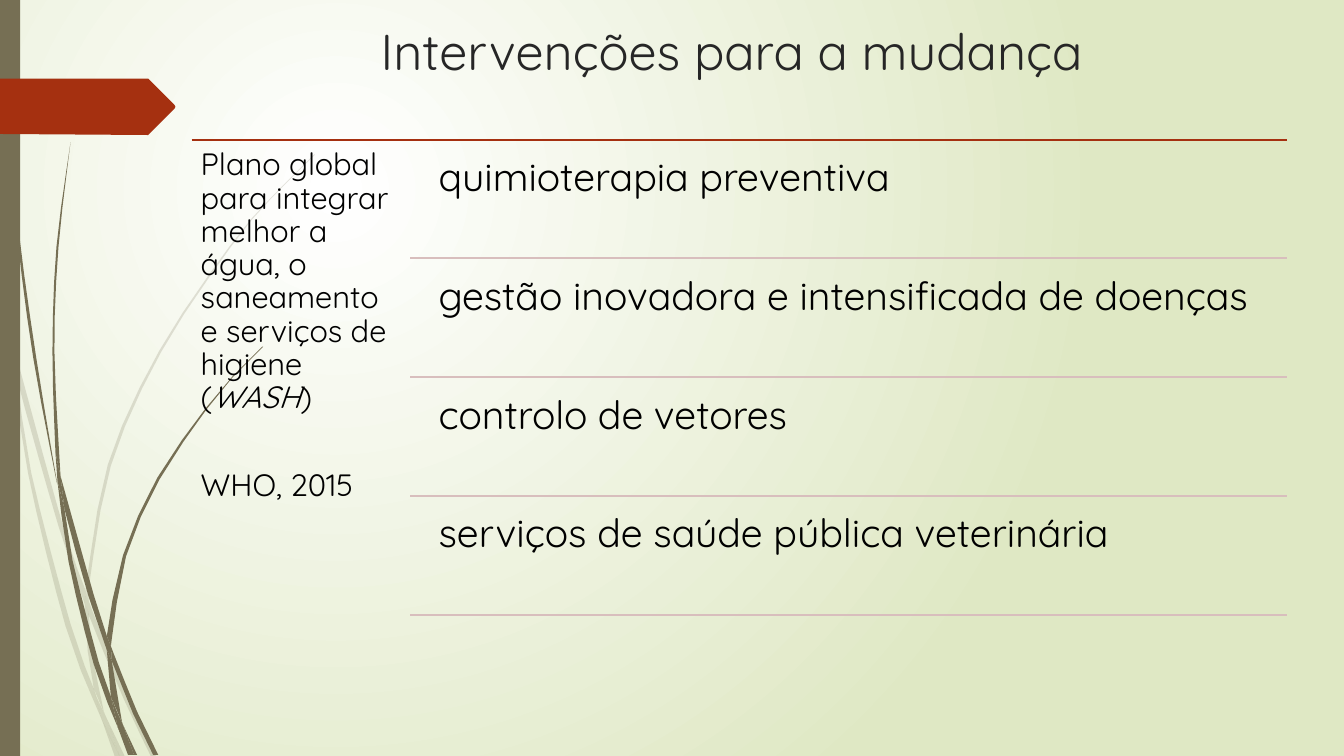
import math
from dataclasses import dataclass
from typing import NamedTuple

from lxml import etree
from pptx import Presentation
from pptx.dml.color import RGBColor
from pptx.enum import shapes, text
from pptx.oxml import ns
from pptx.util import Inches, Pt

Edge = list[tuple[float, float]]


@dataclass(frozen=True)
class Theme:
    font: str = "Quicksand"
    bark: str = "766F54"
    rust: str = "A53010"
    rose: str = "D8BEBD"
    white: str = "FFFFFF"
    leaf: str = "DFE8C4"
    heading: str = "262626"
    ink: str = "000000"
    title_size: int = 36
    item_size: int = 28
    plan_size: int = 22


class Blade(NamedTuple):
    """A piece of grass between two smooth edges, listed in drawing order."""
    out: Edge
    back: Edge


class Rule(NamedTuple):
    left: float
    top: float
    color: str


THEME = Theme()
RIGHT = 12.76
TOP = 1.39
ITEMS_TOP = 1.44
ITEM_STEP = 1.18
ITEM_HEIGHT = 1.12
ITEMS = [
    "quimioterapia preventiva",
    "gestão inovadora e intensificada de doenças",
    "controlo de vetores",
    "serviços de saúde pública veterinária",
]
PENNANT: Edge = [(0, 0.78), (1.47, 0.78), (1.73, 1.04), (1.74, 1.06),
                 (1.73, 1.08), (1.47, 1.34), (0, 1.33)]

PALE_GRASS = [
    Blade([(0.11, 3.5), (0.09, 3.22), (0, 2.82)], [(0, 2.99), (0.1, 3.44)]),
    Blade([(0.14, 3.45), (0.17, 3.76), (0.58, 5.22), (0.84, 5.99)],
          [(0.85, 5.86), (0.62, 5.2), (0.14, 3.45)]),
    Blade([(0.88, 5.96), (0.88, 6.1), (1.23, 6.94), (1.5, 7.51)],
          [(1.55, 7.51), (1.27, 6.92), (0.92, 6.07)]),
    Blade([(1.19, 7.51), (1.24, 7.51)], [(1.05, 7.11)]),
    Blade([(0.93, 6.83), (0.7, 6.19), (0.31, 4.69), (0.17, 3.76), (0.11, 3.5)],
          [(0.11, 3.5), (0.28, 4.7), (0.65, 6.21), (0.92, 6.93), (1.01, 7.14)]),
    Blade([(0.84, 5.99), (0.87, 6.46), (0.93, 6.83), (1.05, 7.11)],
          [(1.03, 7.06), (0.91, 6.46), (0.88, 6.08)]),
    Blade([(0.88, 5.96), (0.88, 5.84), (1.1, 4.62), (1.6, 3.49), (2.29, 2.45),
           (2.68, 1.98), (3.12, 1.54)],
          [(3.12, 1.53), (2.68, 1.97), (2.28, 2.44), (1.58, 3.48),
           (1.07, 4.61), (0.85, 5.84)]),
    Blade([(1.01, 7.14), (1.14, 7.51)], [(1.19, 7.51)]),
    Blade([(0.88, 6.1), (0.88, 5.96), (0.85, 5.86)], [(0.84, 5.99), (0.88, 6.08)]),
    Blade([(0.93, 6.83), (1.01, 7.14), (1.19, 7.51)], [(1.05, 7.11), (0.96, 6.92)]),
]
DARK_GRASS = [
    Blade([(0.04, 0), (0.08, 1.09), (0.19, 2.32), (0.36, 3.55), (0.57, 4.81)],
          [(0.56, 4.77), (0.33, 3.55), (0.17, 2.33), (0.07, 1.1), (0.03, 0)]),
    Blade([(0.6, 4.72), (0.64, 5.05), (0.88, 5.92), (1.06, 6.45)],
          [(1.06, 6.31), (0.93, 5.9), (0.6, 4.72)]),
    Blade([(1.1, 6.41), (1.11, 6.56), (1.32, 7.08), (1.52, 7.49)],
          [(1.57, 7.49), (1.36, 7.06), (1.13, 6.49)]),
    Blade([(1.1, 6.91), (0.98, 6.57), (0.72, 5.56), (0.64, 5.05), (0.57, 4.77)],
          [(0.57, 4.77), (0.68, 5.57), (0.93, 6.59), (1.17, 7.22)]),
    Blade([(0.6, 4.72), (0.54, 3.49), (0.58, 2.45), (0.7, 1.41)],
          [(0.7, 1.41), (0.56, 2.45), (0.52, 3.49), (0.55, 4.49)]),
    Blade([(1.33, 7.49), (1.36, 7.49)], [(1.22, 7.19)]),
    Blade([(0.57, 4.77), (0.64, 5.05)], [(0.6, 4.72), (0.55, 4.49)]),
    Blade([(1.11, 6.33), (1.25, 5.52), (1.58, 4.76), (2.05, 4.06), (2.31, 3.74), (2.61, 3.44)],
          [(2.6, 3.44), (2.31, 3.73), (2.04, 4.05), (1.56, 4.74), (1.22, 5.51),
           (1.06, 6.31), (1.1, 6.41)]),
    Blade([(1.17, 7.22), (1.27, 7.49)], [(1.31, 7.49)]),
    Blade([(1.06, 6.45), (1.1, 6.91), (1.22, 7.19)], [(1.21, 7.16), (1.11, 6.56)]),
    Blade([(1.06, 6.45), (1.11, 6.56)], [(1.1, 6.41), (1.06, 6.31)]),
    Blade([(1.1, 6.91), (1.17, 7.22), (1.3, 7.49)], [(1.33, 7.49), (1.22, 7.19), (1.16, 7.06)]),
]


def smooth(edge: Edge) -> Edge:
    """Sample a Catmull-Rom curve through an edge, more finely on long stretches."""
    padded = [edge[0], *edge, edge[-1]]
    curve = [edge[0]]
    for a, b, c, d in zip(padded, padded[1:], padded[2:], padded[3:]):
        steps = max(1, round(math.dist(b, c) * 2.5))
        for step in range(1, steps + 1):
            t = step / steps
            x, y = (
                (2 * q + (r - p) * t + (2 * p - 5 * q + 4 * r - s) * t**2
                 + (3 * q - p - 3 * r + s) * t**3) / 2
                for p, q, r, s in zip(a, b, c, d))
            curve.append((x, y))
    return curve


def paint(shape, color: str, opacity: int = 100) -> None:
    shape.shadow.inherit = False
    shape.line.fill.background()
    shape.fill.solid()
    shape.fill.fore_color.rgb = RGBColor.from_string(color)
    if opacity < 100:
        rgb = shape._element.spPr.find(".//" + ns.qn("a:srgbClr"))
        etree.SubElement(rgb, ns.qn("a:alpha"), val=str(opacity * 1000))


def draw_outline(parent, outline: Edge, color: str, opacity: int = 100) -> None:
    start, *rest = [(Inches(x), Inches(y)) for x, y in outline]
    builder = parent.build_freeform(*start)
    builder.add_line_segments(rest, close=True)
    paint(builder.convert_to_shape(), color, opacity)


def draw_grass(slide, blades: list[Blade], opacity: int) -> None:
    tuft = slide.shapes.add_group_shape().shapes
    for blade in blades:
        draw_outline(tuft, smooth(blade.out) + smooth(blade.back), THEME.bark, opacity)


def draw_rule(slide, rule: Rule) -> None:
    line = slide.shapes.add_connector(
        shapes.MSO_CONNECTOR.STRAIGHT, Inches(rule.left), Inches(rule.top),
        Inches(RIGHT), Inches(rule.top))
    line.line.color.rgb = RGBColor.from_string(rule.color)
    line.line.width = Pt(1.25)
    etree.SubElement(line._element.spPr, ns.qn("a:effectLst"))


def write(paragraph, words: str, *, size: int, color: str = THEME.ink, italic: bool = False,
          align=text.PP_ALIGN.LEFT, spacing: float = 0.9, before: float = 0) -> None:
    paragraph.alignment = align
    paragraph.line_spacing = spacing
    paragraph.space_before, paragraph.space_after = Pt(before), Pt(0)
    run = paragraph.add_run()
    run.text = words
    run.font.name, run.font.size, run.font.italic = THEME.font, Pt(size), italic
    run.font.color.rgb = RGBColor.from_string(color)


def place(box, left: float, top: float, width: float, height: float,
          inset: float, anchor=text.MSO_ANCHOR.TOP):
    """Position a text shape, set up its frame and return the frame."""
    box.left, box.top, box.width, box.height = map(Inches, (left, top, width, height))
    frame = box.text_frame
    frame.word_wrap, frame.auto_size = True, text.MSO_AUTO_SIZE.NONE
    frame.vertical_anchor = anchor
    frame.margin_left = frame.margin_right = Inches(inset)
    frame.margin_top = frame.margin_bottom = Inches(inset)
    return frame


def fill_background(slide) -> None:
    fill = slide.background.fill
    fill.gradient()
    for stop, color, position in zip(fill.gradient_stops, (THEME.white, THEME.leaf), (0, 1)):
        stop.color.rgb = RGBColor.from_string(color)
        stop.position = position
    linear = slide._element.find(".//" + ns.qn("a:lin"))
    circle = etree.Element(ns.qn("a:path"), path="circle")
    etree.SubElement(circle, ns.qn("a:fillToRect"), l="50000", t="50000", r="100000", b="100000")
    linear.getparent().replace(linear, circle)


def main() -> None:
    deck = Presentation()
    deck.slide_width, deck.slide_height = Inches(13.33), Inches(7.5)
    slide = deck.slides.add_slide(deck.slide_layouts[1])
    fill_background(slide)

    draw_grass(slide, PALE_GRASS, 20)
    draw_grass(slide, DARK_GRASS, 100)
    trunk = slide.shapes.add_shape(
        shapes.MSO_SHAPE.RECTANGLE, 0, 0, Inches(0.2), deck.slide_height)
    paint(trunk, THEME.bark)
    draw_outline(slide.shapes, PENNANT, THEME.rust)

    heading, plan = slide.shapes.title, slide.placeholders[1]
    for holder in (heading, plan):  # bring in front of the grass
        slide.shapes._spTree.append(holder._element)
    frame = place(heading, 2.45, 0.12, 9.75, 0.76, 0.05, text.MSO_ANCHOR.MIDDLE)
    write(frame.paragraphs[0], "Intervenções para a mudança ", size=THEME.title_size,
          color=THEME.heading, align=text.PP_ALIGN.CENTER, spacing=1.0)

    draw_rule(slide, Rule(1.9, TOP, THEME.rust))
    frame = place(plan, 1.9, TOP, 2.17, 4.76, 0.09)
    goal, credit = frame.paragraphs[0], frame.add_paragraph()
    write(goal, "Plano global para integrar melhor a água, o saneamento e serviços de higiene (",
          size=THEME.plan_size)
    write(goal, "WASH", size=THEME.plan_size, italic=True)
    write(goal, ")", size=THEME.plan_size)
    write(credit, "WHO, 2015", size=THEME.plan_size, before=39)
    for paragraph in (goal, credit):
        properties = paragraph._p.get_or_add_pPr()
        properties.set("marL", "0")
        properties.set("indent", "0")
        etree.SubElement(properties, ns.qn("a:buNone"))

    for row, item in enumerate(ITEMS):
        top = ITEMS_TOP + row * ITEM_STEP
        frame = place(slide.shapes.add_textbox(0, 0, 0, 0), 4.23, top, 8.52, ITEM_HEIGHT, 0.12)
        write(frame.paragraphs[0], item, size=THEME.item_size)
        draw_rule(slide, Rule(4.07, top + ITEM_HEIGHT, THEME.rose))

    deck.save("out.pptx")


if __name__ == "__main__":
    main()
